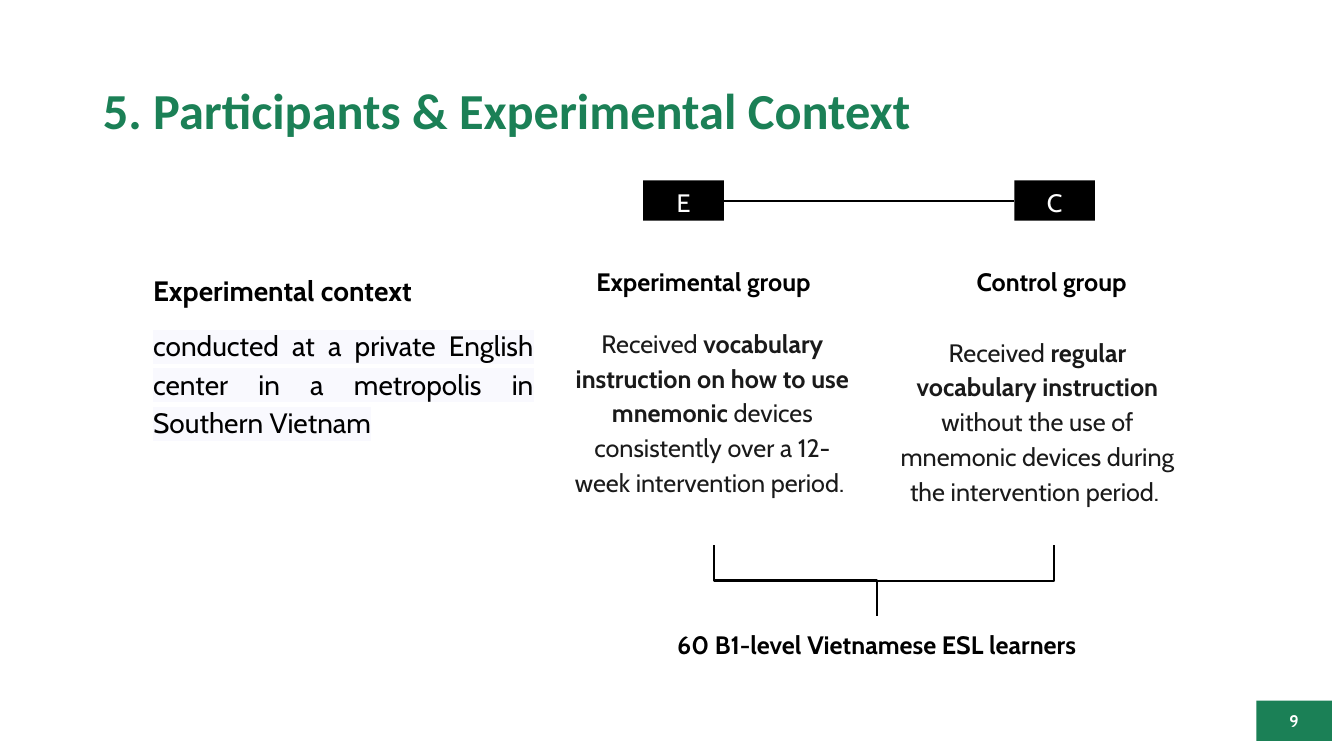
"""Build the slide on participants and experimental context."""
from dataclasses import dataclass

from lxml.etree import SubElement
from pptx import Presentation
from pptx.dml.color import RGBColor
from pptx.enum.shapes import MSO_CONNECTOR, MSO_SHAPE
from pptx.enum.text import MSO_ANCHOR, MSO_AUTO_SIZE, PP_ALIGN
from pptx.oxml.ns import qn
from pptx.oxml.xmlchemy import OxmlElement
from pptx.shapes.autoshape import Shape
from pptx.shapes.connector import Connector
from pptx.slide import Slide
from pptx.util import Inches, Pt


@dataclass(frozen=True)
class Theme:
    green: str = "1B8056"
    black: str = "000000"
    white: str = "FFFFFF"
    body: str = "1A1A1A"
    highlight: str = "F9F9FE"
    title_font: str = "Calibri"
    font: str = "Cabin"
    title_size: int = 36
    context_size: int = 20
    group_size: int = 18
    number_size: int = 12
    line_width: float = 1.5


THEME = Theme()


@dataclass(frozen=True)
class Box:
    left: float
    top: float
    width: float
    height: float
    runs: tuple[tuple[str, bool], ...]
    size: int = THEME.group_size
    color: str = THEME.black
    font: str = THEME.font
    align: PP_ALIGN = PP_ALIGN.CENTER
    anchor: MSO_ANCHOR = MSO_ANCHOR.MIDDLE
    spacing: float = 1.15
    margin: float = 0.1
    fill: str | None = None
    highlight: str | None = None


TITLE = Box(0.92, 0.4, 11.5, 1.45, (("5. Participants & Experimental Context ", True),),
            THEME.title_size, THEME.green, THEME.title_font, PP_ALIGN.JUSTIFY,
            spacing=0.9, margin=0.05)
PAGE_NUMBER = Box(12.46, 6.95, 0.75, 0.4, (("9", True),), THEME.number_size, THEME.white,
                  spacing=1.0, margin=0.05, fill=THEME.green)
EXPERIMENTAL_TAG, CONTROL_TAG = (
    Box(left, 1.79, 0.8, 0.4, ((letter, False),), color=THEME.white, fill=THEME.black)
    for left, letter in ((6.38, "E"), (10.06, "C")))
TEXTS = (
    Box(1.42, 2.63, 3.97, 0.45, (("Experimental context", True),), THEME.context_size,
        align=PP_ALIGN.LEFT),
    Box(1.42, 3.11, 3.97, 1.76,
        (("conducted at a private English center in a metropolis in Southern Vietnam", False),),
        THEME.context_size, align=PP_ALIGN.JUSTIFY, anchor=MSO_ANCHOR.TOP,
        highlight=THEME.highlight),
    Box(5.73, 2.44, 2.55, 0.66, (("Experimental group ", True),)),
    Box(9.44, 2.54, 1.98, 0.45, (("Control group", True),)),
    Box(6.46, 6.11, 4.47, 0.52, (("60 B1-level Vietnamese ESL learners", True),)),
    Box(5.59, 3.11, 2.95, 2.13,
        (("Received ", False),
         ("vocabulary instruction on how to use mnemonic ", True),
         ("devices consistently over a 12-week intervention period. ", False)),
        color=THEME.body, anchor=MSO_ANCHOR.TOP),
    Box(8.74, 3.18, 3.1, 1.96,
        (("Received ", False),
         ("regular vocabulary instruction ", True),
         ("without the use of mnemonic devices during the intervention period. ", False)),
        color=THEME.body),
)
BRACKET_STARTS = (7.08, 10.45)
BRACKET_TOP, BRACKET_BOTTOM, BRACKET_MIDDLE = 5.41, 6.11, 8.7


def write_text(shape: Shape, box: Box) -> None:
    frame = shape.text_frame
    frame_format = {
        "word_wrap": True, "auto_size": MSO_AUTO_SIZE.NONE, "vertical_anchor": box.anchor,
        "margin_left": Inches(0.1), "margin_right": Inches(0.1),
        "margin_top": Inches(box.margin), "margin_bottom": Inches(box.margin),
    }
    for name, value in frame_format.items():
        setattr(frame, name, value)
    paragraph = frame.paragraphs[0]
    paragraph.alignment = box.align
    paragraph.line_spacing = box.spacing
    for text, bold in box.runs:
        run = paragraph.add_run()
        run.text = text
        font_format = {"name": box.font, "size": Pt(box.size), "bold": bold}
        for name, value in font_format.items():
            setattr(run.font, name, value)
        run.font.color.rgb = RGBColor.from_string(box.color)
        if box.highlight:
            highlight = OxmlElement("a:highlight")
            SubElement(highlight, qn("a:srgbClr"), val=box.highlight)
            run.font._element.find(qn("a:solidFill")).addnext(highlight)


def add_title(slide: Slide, box: Box) -> None:
    title = slide.shapes.title
    for name in ("left", "top", "width", "height"):
        setattr(title, name, Inches(getattr(box, name)))
    write_text(title, box)


def add_box(slide: Slide, box: Box) -> Shape:
    place = [Inches(value) for value in (box.left, box.top, box.width, box.height)]
    if box.fill:
        shape = slide.shapes.add_shape(MSO_SHAPE.RECTANGLE, *place)
        shape.shadow.inherit = False
        shape.fill.solid()
        shape.fill.fore_color.rgb = RGBColor.from_string(box.fill)
        shape.line.fill.background()
    else:
        shape = slide.shapes.add_textbox(*place)
    write_text(shape, box)
    return shape


def add_line(slide: Slide, kind: MSO_CONNECTOR, *ends: float) -> Connector:
    connector = slide.shapes.add_connector(kind, *(Inches(end) for end in ends))
    connector.line.color.rgb = RGBColor.from_string(THEME.black)
    connector.line.width = Pt(THEME.line_width)
    SubElement(connector._element.spPr, qn("a:effectLst"))
    return connector


def add_bracket_arm(slide: Slide, start: float) -> None:
    center_x = (start + BRACKET_MIDDLE) / 2
    center_y = (BRACKET_TOP + BRACKET_BOTTOM) / 2
    half_height = (BRACKET_BOTTOM - BRACKET_TOP) / 2
    half_width = abs(BRACKET_MIDDLE - start) / 2
    goes_right = start < BRACKET_MIDDLE
    offset = half_height if goes_right else -half_height
    arm = add_line(slide, MSO_CONNECTOR.ELBOW, center_x + offset, center_y - half_width,
                   center_x - offset, center_y + half_width)
    degrees = 270 if goes_right else 90
    arm._element.spPr.find(qn("a:xfrm")).set("rot", str(degrees * 60000))


def main() -> None:
    presentation = Presentation()
    presentation.slide_width = Inches(13.33)
    presentation.slide_height = Inches(7.5)
    slide = presentation.slides.add_slide(presentation.slide_layouts[5])
    add_title(slide, TITLE)
    add_box(slide, PAGE_NUMBER)
    for box in TEXTS:
        add_box(slide, box)
    experimental_tag = add_box(slide, EXPERIMENTAL_TAG)
    control_tag = add_box(slide, CONTROL_TAG)
    link = add_line(slide, MSO_CONNECTOR.STRAIGHT, 7.18, 1.99, 10.06, 1.99)
    link.begin_connect(experimental_tag, 3)
    link.end_connect(control_tag, 1)
    for start in BRACKET_STARTS:
        add_bracket_arm(slide, start)
    presentation.save("out.pptx")


if __name__ == "__main__":
    main()
